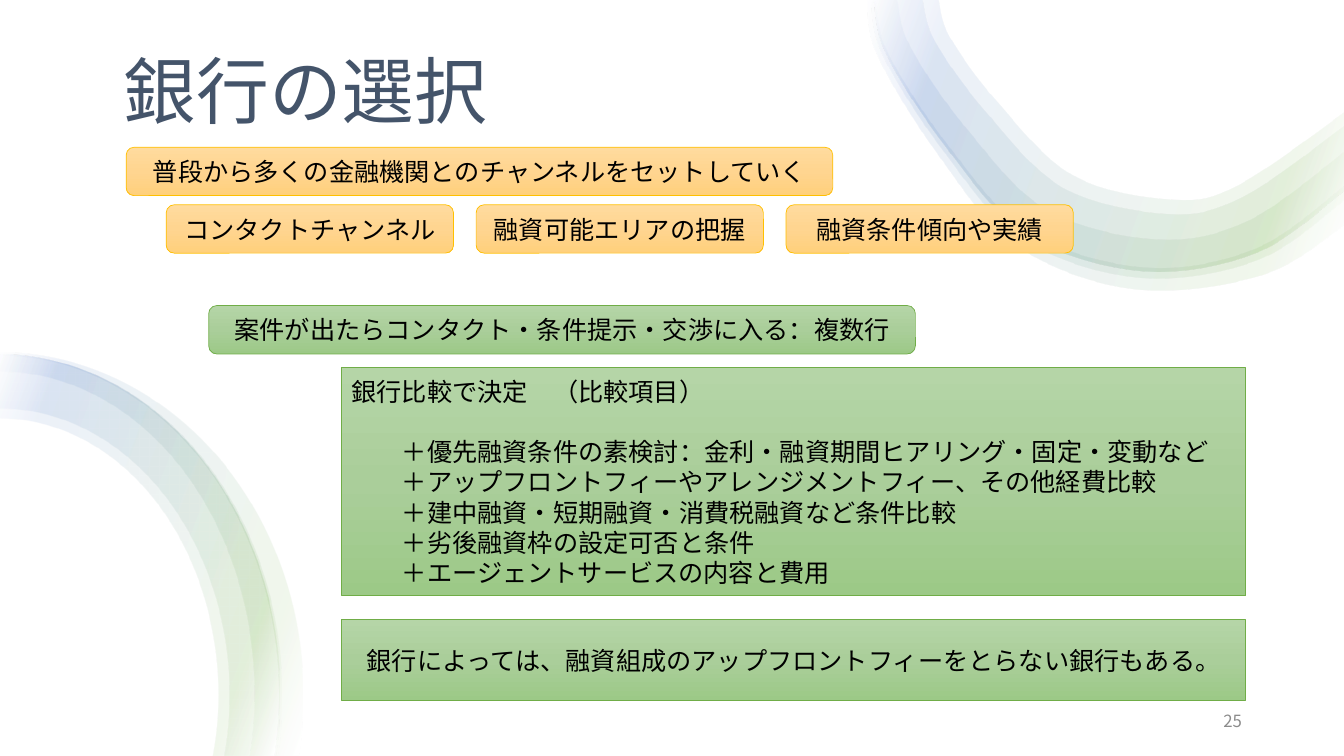
"""Build the slide on choosing a bank."""
from dataclasses import dataclass
from math import asin, cos, pi, sin

from lxml import etree
from pptx import Presentation
from pptx import util as u
from pptx.dml.color import RGBColor
from pptx.enum import shapes, text
from pptx.oxml.ns import qn

FONT = "Noto Sans CJK JP"
BLACK = RGBColor(0x00, 0x00, 0x00)
SLATE = RGBColor(0x44, 0x54, 0x6A)
GREY = RGBColor(0x8C, 0x8C, 0x8C)
WHITE = RGBColor(0xFF, 0xFF, 0xFF)
GREEN = RGBColor(0x70, 0xAD, 0x47)
BLUE = RGBColor(0x44, 0x72, 0xC4)
GOLD = RGBColor(0xFF, 0xC0, 0x00)
MINT = (RGBColor(0xB5, 0xD5, 0xA7), RGBColor(0xAA, 0xCE, 0x9A), RGBColor(0x9C, 0xC9, 0x87))
PEACH = (RGBColor(0xFF, 0xDB, 0x9E), RGBColor(0xFF, 0xD5, 0x90), RGBColor(0xFF, 0xD0, 0x7C))
VEIL = ((2, WHITE), (16, GREEN), (85, BLUE), (100, WHITE))
LEFT, MID, RIGHT = text.PP_ALIGN.LEFT, text.PP_ALIGN.CENTER, text.PP_ALIGN.RIGHT
ROUND, RECT = shapes.MSO_SHAPE.ROUNDED_RECTANGLE, shapes.MSO_SHAPE.RECTANGLE
WIDE, HIGH = 33.87, 19.05
STEPS = 8
LINE = u.Pt(21.6)

Curve = list[tuple[float, float]]


@dataclass
class Box:
    """A filled box with one line of text, in centimetres."""
    words: str
    x: float
    y: float
    w: float
    h: float = 1.22
    kind: shapes.MSO_SHAPE = ROUND
    tones: tuple = MINT
    edge: RGBColor = GREEN


@dataclass
class Label:
    """A free line of text, in centimetres."""
    words: str
    x: float
    y: float
    w: float
    h: float
    size: int
    color: RGBColor
    align: text.PP_ALIGN
    anchor: text.MSO_ANCHOR
    lead: float = 1.0


OUTER = ((21.84, 0), (22.12, 1.42), (23.65, 3.91), (25.63, 6.2), (28.63, 7.29),
         (31.83, 6.91), (WIDE, 5.66))
INNER = ((23.65, 0), (23.93, 0.94), (25.1, 2.54), (27.03, 4.42), (29.57, 5.03),
         (31.22, 4.65), (WIDE, 2.84))
SWEEPS = ((0, 0.35), (0.22, 0.65), (0.3, 0.88), (0.3, 1))
HUB = 17.5
BOWS = (
    ((5.49, 6.95), (7.04, 8.56)),
    ((5.77, 7.2), (7.04, 8.56)),
    ((6.4, 8.13), (7.09, 8.56)),
    ((7.01, 8.53), (7.62, 8.61)),
)
LABELS = (
    Label("銀行の選択", 1.57, 1.19, 12.27, 2.31, 52, SLATE, MID, text.MSO_ANCHOR.BOTTOM, 0.9),
    Label("25", 23.93, 17.65, 7.62, 1.02, 12, GREY, RIGHT, text.MSO_ANCHOR.MIDDLE),
)
TOPICS = ("コンタクトチャンネル", "融資可能エリアの把握", "融資条件傾向や実績")
BOXES = (
    Box("普段から多くの金融機関とのチャンネルをセットしていく", 3.18, 3.71, 17.81,
        tones=PEACH, edge=GOLD),
    *(Box(topic, 4.19 + 7.81 * i, 5.16, 7.24, tones=PEACH, edge=GOLD)
      for i, topic in enumerate(TOPICS)),
    Box("案件が出たらコンタクト・条件提示・交渉に入る：複数行", 5.26, 7.7, 17.81),
    Box("銀行によっては、融資組成のアップフロントフィーをとらない銀行もある。",
        8.61, 15.62, 22.78, 2.03, RECT),
)
PANEL = Box("銀行比較で決定　（比較項目）", 8.61, 9.27, 22.78, 5.74, RECT)
ITEMS = (
    "＋優先融資条件の素検討：金利・融資期間ヒアリング・固定・変動など",
    "＋アップフロントフィーやアレンジメントフィー、その他経費比較",
    "＋建中融資・短期融資・消費税融資など条件比較",
    "＋劣後融資枠の設定可否と条件",
    "＋エージェントサービスの内容と費用",
)


def smooth(points: Curve) -> Curve:
    """Sample a Catmull-Rom curve through the points."""
    ends = [points[0], *points, points[-1]]
    curve = []
    for a, b, c, d in zip(ends, ends[1:], ends[2:], ends[3:]):
        for t in (k / STEPS for k in range(STEPS)):
            curve.append(tuple(
                q + ((r - p) * t + (2 * p - 5 * q + 4 * r - s) * t ** 2
                     + (3 * q - p - 3 * r + s) * t ** 3) / 2
                for p, q, r, s in zip(a, b, c, d)))
    return [*curve, points[-1]]


def sweep(share: float) -> Curve:
    """Blend the outer and inner edges, holding back on the left."""
    last = len(OUTER) - 1
    points = []
    for i, (a, b) in enumerate(zip(OUTER, INNER)):
        mix = share ** (2 - i / last)
        points.append(tuple(p + (q - p) * mix for p, q in zip(a, b)))
    return smooth(points)


def bow(across: float, tall: float) -> Curve:
    """Follow an ellipse from the left edge to the bottom edge."""
    count = 6 * STEPS
    span = pi / 2 + asin((HIGH - HUB) / tall)
    turns = (span * k / count for k in range(count + 1))
    return [(across * sin(t), HUB - tall * cos(t)) for t in turns]


def shade(shape, stops, angle: int, alpha: int = 100) -> None:
    """Fill a shape with a linear gradient, its angle counted clockwise."""
    shape.shadow.inherit = False
    shape.fill.gradient()
    shape.fill.gradient_angle = 360 - angle
    chain = shape._element.spPr.find(qn("a:gradFill")).find(qn("a:gsLst"))
    for old in list(chain):
        chain.remove(old)
    for place, tone in stops:
        stop = etree.SubElement(chain, qn("a:gs"), pos=str(place * 1000))
        color = etree.SubElement(stop, qn("a:srgbClr"), val=str(tone))
        if alpha < 100:
            etree.SubElement(color, qn("a:alpha"), val=str(alpha * 1000))


def write(para, words: str, size: int, color: RGBColor, align: text.PP_ALIGN) -> None:
    """Put styled words into a paragraph."""
    para.text = words
    para.alignment = align
    font = para.font
    font.size, font.name, font.color.rgb = u.Pt(size), FONT, color
    props = para._p.pPr.find(qn("a:defRPr"))
    etree.SubElement(props, qn("a:ea"), typeface=FONT)


def draw_band(slide, inner: Curve, outer: Curve) -> None:
    """Draw a translucent band between two edges."""
    first, *rest = [(u.Cm(x), u.Cm(y)) for x, y in inner + outer[::-1]]
    pen = slide.shapes.build_freeform(*first)
    pen.add_line_segments(rest, close=True)
    band = pen.convert_to_shape()
    shade(band, VEIL, 200, 10)
    band.line.fill.background()


def draw_label(slide, label: Label) -> None:
    """Draw a line of text without a box."""
    area = map(u.Cm, (label.x, label.y, label.w, label.h))
    frame = slide.shapes.add_textbox(*area).text_frame
    frame.word_wrap = True
    frame.vertical_anchor = label.anchor
    para = frame.paragraphs[0]
    write(para, label.words, label.size, label.color, label.align)
    para.line_spacing = label.lead


def draw_box(slide, box: Box, align: text.PP_ALIGN = MID):
    """Draw a gradient box and return its text frame."""
    shape = slide.shapes.add_shape(box.kind, *map(u.Cm, (box.x, box.y, box.w, box.h)))
    shade(shape, zip((0, 50, 100), box.tones), 90)
    shape.line.color.rgb = box.edge
    shape.line.width = u.Pt(0.5)
    frame = shape.text_frame
    frame.word_wrap = True
    frame.vertical_anchor = text.MSO_ANCHOR.MIDDLE
    write(frame.paragraphs[0], box.words, 18, BLACK, align)
    return frame


def draw_panel(slide) -> None:
    """Draw the comparison panel with its indented items."""
    frame = draw_box(slide, PANEL, LEFT)
    frame.paragraphs[0].space_after = LINE
    for item in ITEMS:
        para = frame.add_paragraph()
        write(para, item, 18, BLACK, LEFT)
        para._p.pPr.set("marL", str(u.Cm(1.27)))
    for para in frame.paragraphs:
        para.line_spacing = LINE


def main() -> None:
    """Build and save the deck."""
    deck = Presentation()
    deck.slide_width, deck.slide_height = u.Cm(WIDE), u.Cm(HIGH)
    slide = deck.slides.add_slide(deck.slide_layouts[6])
    for low, high in SWEEPS:
        draw_band(slide, sweep(high), sweep(low))
    for inner, outer in BOWS:
        draw_band(slide, bow(*inner), bow(*outer))
    for label in LABELS:
        draw_label(slide, label)
    for box in BOXES:
        draw_box(slide, box)
    draw_panel(slide)
    deck.save("out.pptx")


if __name__ == "__main__":
    main()
